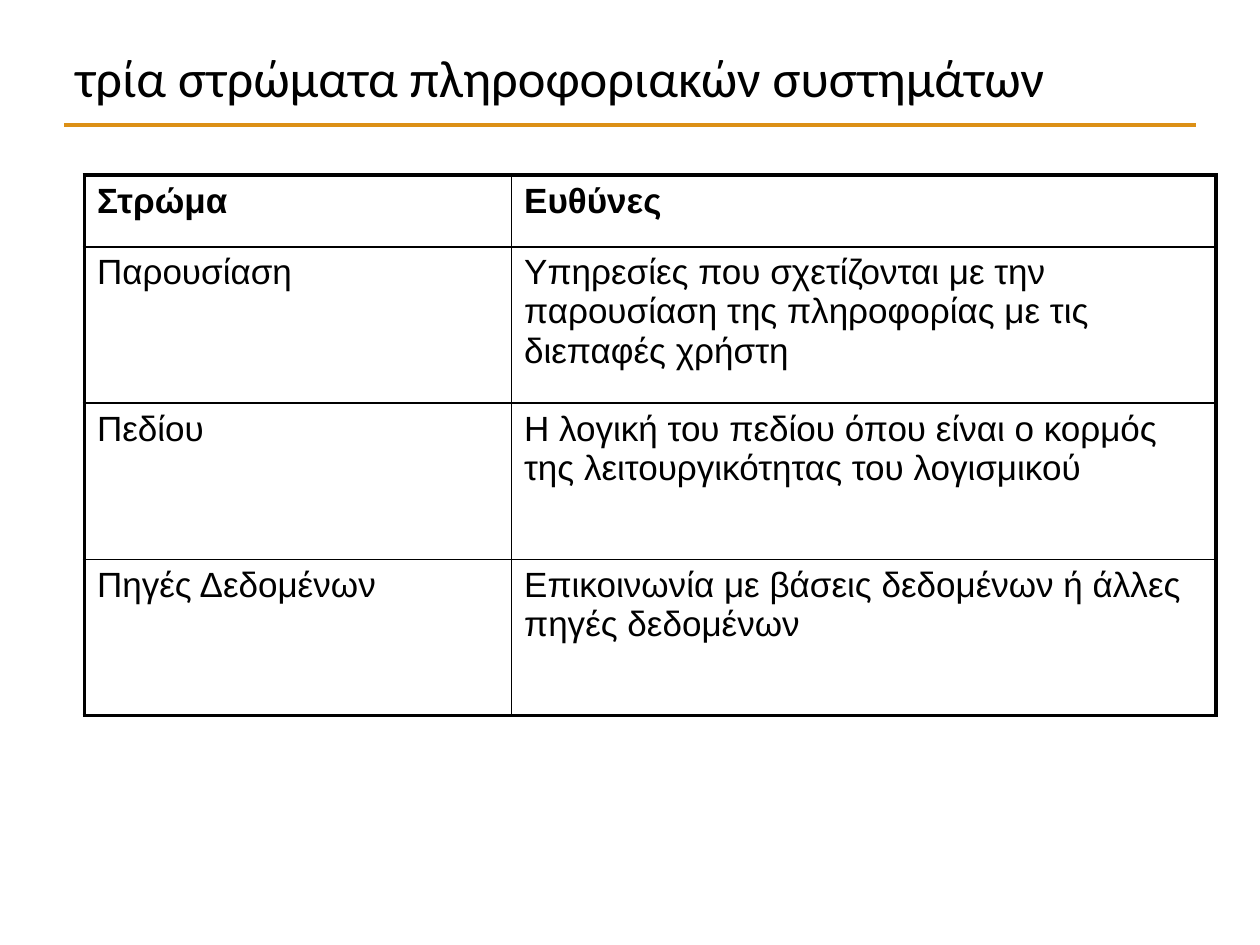
"""Build a slide with a table of the three layers of information systems."""
from lxml.etree import SubElement as Sub
from pptx import Presentation
from pptx.dml.color import RGBColor
from pptx.enum.shapes import MSO_CONNECTOR as Link
from pptx.enum.text import MSO_ANCHOR as Anchor
from pptx.oxml.ns import qn
from pptx.util import Inches, Pt


def tint(code):
    return RGBColor.from_string(code)


def write(frame, text, form):
    para = frame.paragraphs[0]
    run = para.add_run()
    run.text = text
    run.font.color.rgb = tint("000000")
    for key, val in form.items():
        setattr(run.font, key, val)


deck = Presentation()
deck.slide_width, deck.slide_height = Inches(10), Inches(7.5)
slide = deck.slides.add_slide(deck.slide_layouts[6])

rule = slide.shapes.add_connector(
    Link.STRAIGHT, Inches(0.51), Inches(0.99), Inches(9.49), Inches(0.99))
rule.line.color.rgb = tint("DC9016")
rule.line.width = Pt(2.5)
Sub(rule._element.spPr, qn("a:effectLst"))

title = slide.shapes.add_textbox(
    Inches(0.5), Inches(0.3), Inches(9), Inches(0.61)).text_frame
title.word_wrap = True
title.vertical_anchor = Anchor.MIDDLE
write(title, "τρία στρώματα πληροφοριακών συστημάτων",
      {"name": "Calibri", "size": Pt(30)})

rows = [
    ("Στρώμα", "Ευθύνες"),
    ("Παρουσίαση", "Υπηρεσίες που σχετίζονται με την παρουσίαση της "
                   "πληροφορίας με τις διεπαφές χρήστη"),
    ("Πεδίου", "Η λογική του πεδίου όπου είναι ο κορμός της "
               "λειτουργικότητας του λογισμικού"),
    ("Πηγές Δεδομένων", "Επικοινωνία με βάσεις δεδομένων ή άλλες "
                        "πηγές δεδομένων"),
]
wides = [3.39, 5.59]
highs = [0.57] + [1.24] * 3
table = slide.shapes.add_table(
    len(rows), len(wides), Inches(0.67), Inches(1.39),
    Inches(sum(wides)), Inches(sum(highs))).table
table.horz_banding = False
for col, wide in zip(table.columns, wides):
    col.width = Inches(wide)
for row, high in zip(table.rows, highs):
    row.height = Inches(high)

for r, row in enumerate(rows):
    for c, text in enumerate(row):
        cell = table.cell(r, c)
        write(cell.text_frame, text,
              {"name": "Arial", "size": Pt(20), "bold": r == 0})
        props = cell._tc.get_or_add_tcPr()
        outer = {"L": c == 0, "R": c == len(wides) - 1,
                 "T": r == 0, "B": r == len(rows) - 1}
        for side, edge in outer.items():
            line = Sub(props, qn("a:ln" + side), w=str(Pt(2.25 if edge else 1)))
            fill = Sub(line, qn("a:solidFill"))
            Sub(fill, qn("a:srgbClr"), val="000000")
        cell.fill.background()

deck.save("out.pptx")
